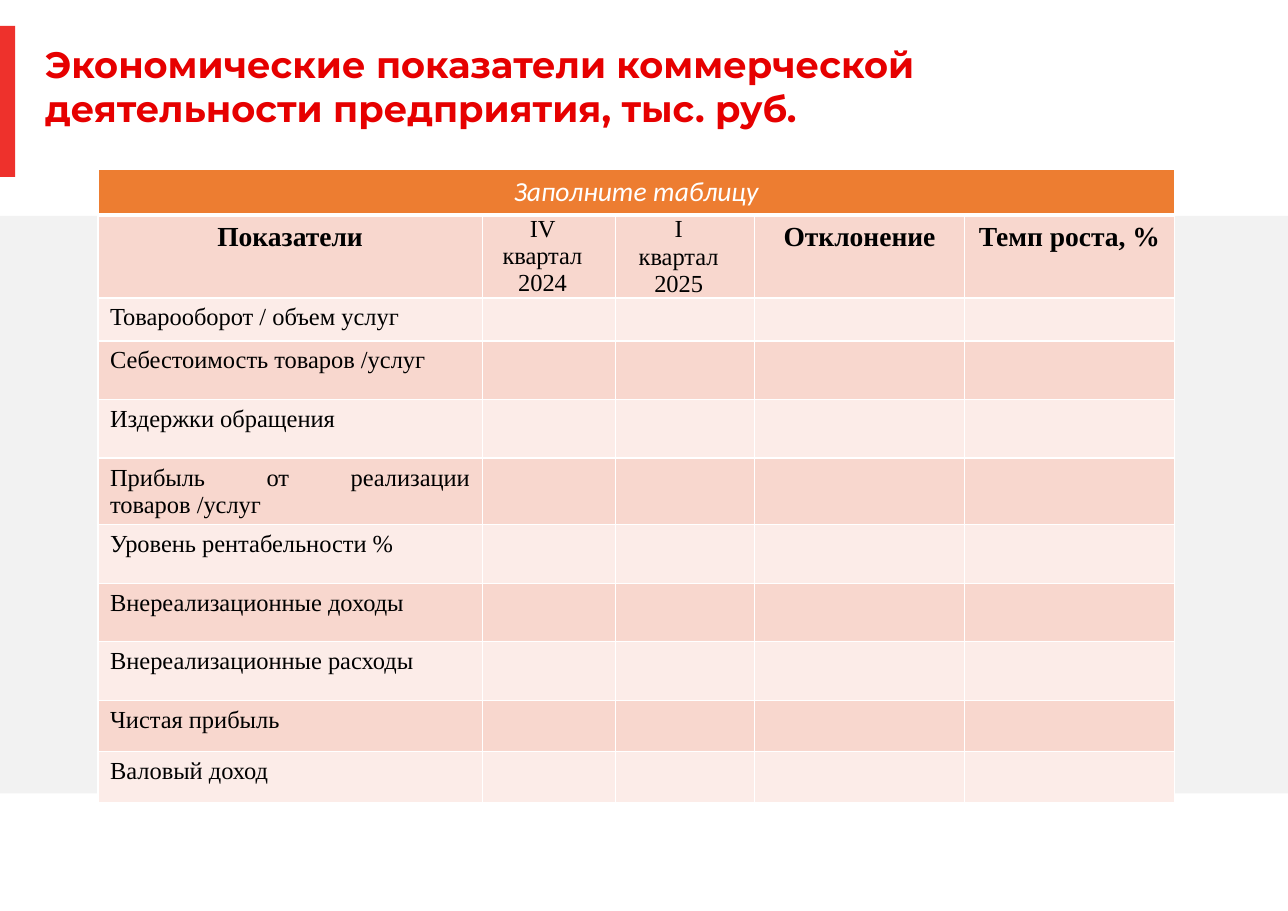
import pptx
import pptx.util
import pptx.dml.color
import pptx.enum.shapes
import pptx.enum.text
import pptx.oxml
import pptx.oxml.ns

Cm = pptx.util.Cm
Pt = pptx.util.Pt
Align = pptx.enum.text.PP_ALIGN
Anchor = pptx.enum.text.MSO_ANCHOR


def paint(target, color):
    target.solid()
    target.fore_color.rgb = pptx.dml.color.RGBColor.from_string(color)


def write(frame, text, font="Times New Roman", size=16, color="000000",
          bold=False, italic=False, align=Align.CENTER, after=0):
    frame.word_wrap = True
    frame.text = text
    for para in frame.paragraphs:
        para.alignment = align
        para.space_after = Pt(after)
        for run in para.runs:
            run.font.name = font
            run.font.size = Pt(size)
            run.font.bold = bold
            run.font.italic = italic
            paint(run.font.fill, color)


deck = pptx.Presentation()
deck.slide_width, deck.slide_height = Cm(29.7), Cm(21)
slide = deck.slides.add_slide(deck.slide_layouts[5])

# Grey band and red bar
for top, width, height, color in [(4.98, 29.7, 13.31, "F2F2F2"),
                                  (0.6, 0.35, 3.48, "EE312C")]:
    block = slide.shapes.add_shape(pptx.enum.shapes.MSO_SHAPE.RECTANGLE,
                                   0, Cm(top), Cm(width), Cm(height))
    block.shadow.inherit = False
    block.line.fill.background()
    paint(block.fill, color)

# Title
title = slide.shapes.title
title.left, title.top = Cm(1.04), Cm(0.94)
title.width, title.height = Cm(25.37), Cm(2.06)
frame = title.text_frame
frame.margin_left = frame.margin_right = 0
frame.margin_top = frame.margin_bottom = 0
frame.vertical_anchor = Anchor.MIDDLE
write(frame, "Экономические показатели коммерческой деятельности предприятия, тыс. руб.",
      font="Montserrat", size=24, color="E60000", bold=True, align=Align.LEFT)

# Table grid
heads = ["Показатели", "IV квартал 2024", "I\nквартал 2025",
         "Отклонение", "Темп роста, %"]
items = ["Товарооборот / объем услуг", "Себестоимость товаров /услуг",
         "Издержки обращения", "Прибыль от реализации товаров /услуг",
         "Уровень рентабельности %", "Внереализационные доходы",
         "Внереализационные расходы", "Чистая прибыль", "Валовый доход"]
widths = [8.86, 3.08, 3.2, 4.84, 4.84]
heights = [1.04, 1.9, 0.99, 1.35, 1.35, 1.52, 1.35, 1.35, 1.35, 1.18, 1.18]
table = slide.shapes.add_table(len(heights), len(widths), Cm(2.26), Cm(3.91),
                               Cm(sum(widths)), Cm(sum(heights))).table
for col, width in zip(table.columns, widths):
    col.width = Cm(width)
for row, height in zip(table.rows, heights):
    row.height = Cm(height)

# Cell fills, margins and white borders
for r in range(len(heights)):
    for c in range(len(widths)):
        cell = table.cell(r, c)
        filled = r < 2 or c == 0
        cell.margin_left = cell.margin_right = Cm(0.28)
        cell.margin_top = cell.margin_bottom = Cm(0.14 if filled else 0)
        props = cell._tc.get_or_add_tcPr()
        for side in "LRTB":
            thick = (r, side) in [(0, "B"), (1, "T")]
            props.append(pptx.oxml.parse_xml(
                f'<a:ln{side} {pptx.oxml.ns.nsdecls("a")} w="{Pt(3 if thick else 1)}">'
                '<a:solidFill><a:srgbClr val="FFFFFF"/></a:solidFill>'
                f'</a:ln{side}>'))
        paint(cell.fill, "ED7D31" if r == 0 else "F8D7CE" if r % 2 else "FCECE8")

# Banner row
table.cell(0, 0).merge(table.cell(0, 4))
write(table.cell(0, 0).text_frame, "Заполните таблицу", font="Calibri",
      size=18, color="FFFFFF", italic=True)

# Column heads
for c, head in enumerate(heads):
    cell = table.cell(1, c)
    if "квартал" in head:
        cell.margin_left, cell.margin_right = Cm(0.17), Cm(0.47)
        cell.margin_top = cell.margin_bottom = 0
        write(cell.text_frame, head, after=0.6)
    else:
        write(cell.text_frame, head, size=18, bold=True)

# Row labels
for r, item in enumerate(items, 2):
    write(table.cell(r, 0).text_frame, item, align=Align.JUSTIFY)
table.cell(5, 0).vertical_anchor = Anchor.MIDDLE

deck.save("out.pptx")
